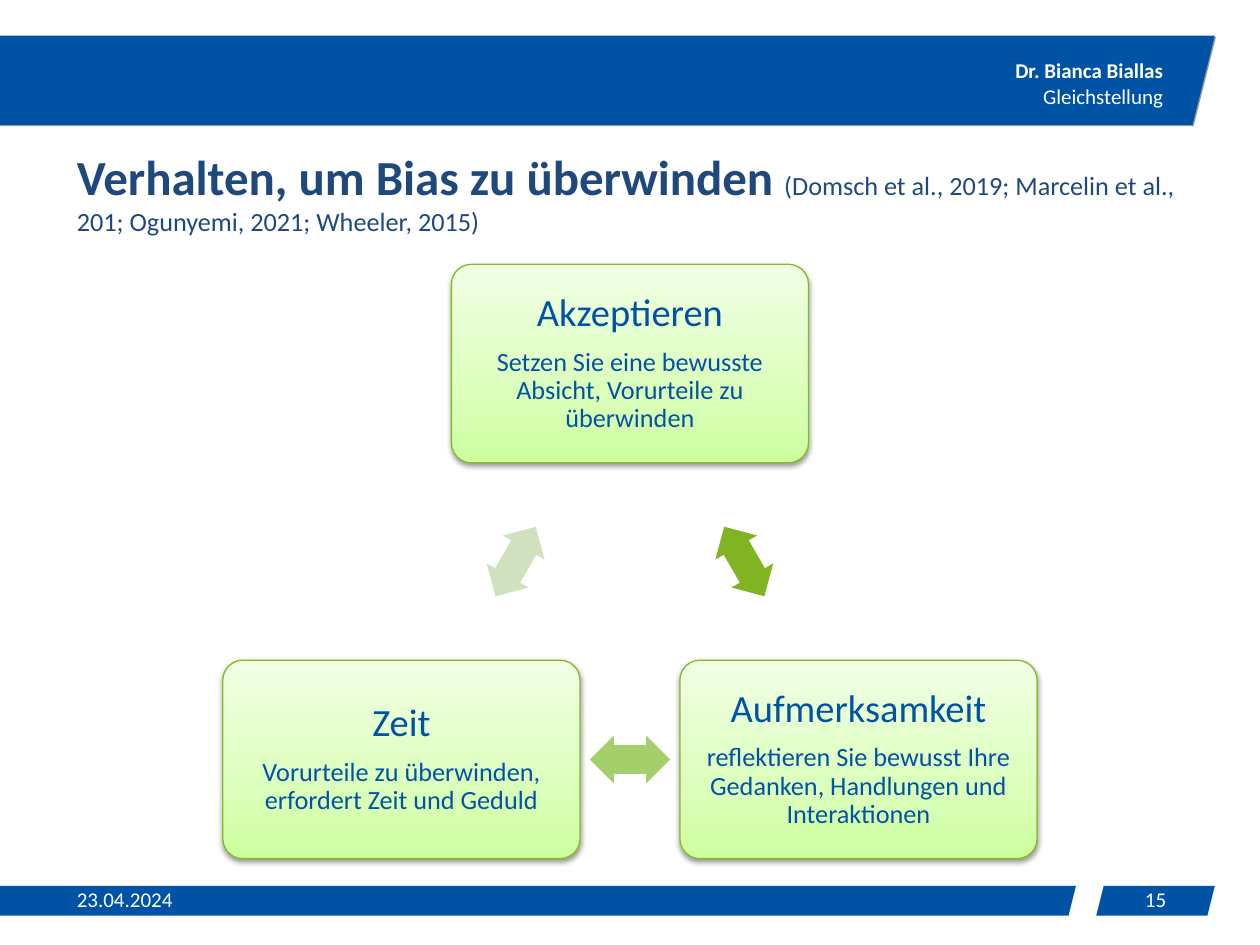
import copy
import math
from dataclasses import dataclass

from lxml import etree
from pptx import Presentation
from pptx import util as u
from pptx.dml.color import RGBColor
from pptx.enum import shapes, text
from pptx.oxml.ns import qn


@dataclass(frozen=True)
class Theme:
    font: str = "Calibri"
    blue: str = "0053A4"
    title: str = "1F497D"
    white: str = "FFFFFF"
    card_line: str = "84BC20"
    card_fill: tuple = ((0, "CDFF9F"), (0.35, "DBFFBB"), (1, "F1FFE5"))
    title_size: float = 28
    heading_size: float = 22
    body_size: float = 15
    small_size: float = 12


THEME = Theme()

HEADER = ("Dr. Bianca Biallas", "Gleichstellung")
TITLE = "Verhalten, um Bias zu überwinden "
SOURCES = "(Domsch et al., 2019; Marcelin et al., 201; Ogunyemi, 2021; Wheeler, 2015)"
DATE, PAGE = "23.04.2024", "15"

# Clockwise from the top: heading, body, colour of the arrow to the next card
CARDS = [
    ("Akzeptieren", "Setzen Sie eine bewusste Absicht, Vorurteile zu überwinden", "80B423"),
    ("Aufmerksamkeit", "reflektieren Sie bewusst Ihre Gedanken, Handlungen und Interaktionen", "A4D06B"),
    ("Zeit", "Vorurteile zu überwinden, erfordert Zeit und Geduld", "CFE1BE"),
]

# Left, top, width, height in cm
HEADER_BAR = (-0.51, 0.72, 25, 1.8)
FOOTER_BARS = [(-0.51, 17.86, 22.2, 0.6), (22.1, 17.86, 2.39, 0.6)]
CYCLE_CENTER = (12.7, 12.65)
CYCLE_RADIUS = 5.32
CARD_SIZE = (7.2, 4)
ARROW_SIZE = (1.62, 0.97)


def rgb(color):
    return RGBColor.from_string(color)


def add_shape(slide, kind, box, color=None):
    shape = slide.shapes.add_shape(kind, *map(u.Cm, box))
    shape.shadow.inherit = False
    shape.line.fill.background()
    if color:
        shape.fill.solid()
        shape.fill.fore_color.rgb = rgb(color)
    return shape


def add_shadow(shape, opacity, blur, distance, angle):
    """Give an outer shadow; opacity in percent, lengths in points."""
    effects = shape._element.spPr.find(qn("a:effectLst"))
    shadow = etree.SubElement(
        effects, qn("a:outerShdw"), blurRad=str(u.Pt(blur)),
        dist=str(u.Pt(distance)), dir=str(angle * 60000), rotWithShape="0")
    color = etree.SubElement(shadow, qn("a:srgbClr"), val="000000")
    etree.SubElement(color, qn("a:alpha"), val=str(opacity * 1000))


def fill_gradient(shape, stops):
    """Run the colour stops from the bottom of the shape to its top."""
    shape.fill.gradient()
    shape.fill.gradient_angle = 90
    stop_list = shape._element.spPr.find(qn("a:gradFill")).find(qn("a:gsLst"))
    stop_list.insert(1, copy.deepcopy(stop_list[0]))
    for stop, (position, color) in zip(shape.fill.gradient_stops, stops):
        stop.position = position
        stop.color.rgb = rgb(color)


def add_run(paragraph, content, size=THEME.small_size, color=THEME.white, bold=False):
    run = paragraph.add_run()
    run.text = content
    run.font.name = THEME.font
    run.font.size = u.Pt(size)
    run.font.bold = bold
    run.font.color.rgb = rgb(color)


def add_text_box(slide, box, paragraphs, align=text.PP_ALIGN.LEFT,
                 anchor=text.MSO_ANCHOR.MIDDLE, wrap=True):
    """Each paragraph is a list of (text, format) runs."""
    frame = slide.shapes.add_textbox(*map(u.Cm, box)).text_frame
    frame.word_wrap = wrap
    frame.vertical_anchor = anchor
    for index, runs in enumerate(paragraphs):
        paragraph = frame.add_paragraph() if index else frame.paragraphs[0]
        paragraph.alignment = align
        for content, style in runs:
            add_run(paragraph, content, **style)


def add_card(slide, center, heading, body):
    width, height = CARD_SIZE
    box = (center[0] - width / 2, center[1] - height / 2, width, height)
    card = add_shape(slide, shapes.MSO_SHAPE.ROUNDED_RECTANGLE, box)
    card.adjustments[0] = 0.1
    fill_gradient(card, THEME.card_fill)
    card.line.color.rgb = rgb(THEME.card_line)
    card.line.width = u.Pt(0.75)
    add_shadow(card, 38, 3.1, 1.6, 90)

    frame = card.text_frame
    frame.word_wrap = True
    frame.vertical_anchor = text.MSO_ANCHOR.MIDDLE
    frame.margin_left = frame.margin_right = u.Cm(0.35)
    frame.margin_top = frame.margin_bottom = u.Cm(0.35)
    lines = [(heading, THEME.heading_size), (body, THEME.body_size)]
    for index, (content, size) in enumerate(lines):
        paragraph = frame.add_paragraph() if index else frame.paragraphs[0]
        paragraph.alignment = text.PP_ALIGN.CENTER
        paragraph.line_spacing = 0.9
        if index:
            paragraph.space_before = u.Pt(7.5)
        add_run(paragraph, content, size=size, color=THEME.blue)


def add_arrow(slide, start, end, color):
    """Put a double arrow halfway between two card centres."""
    width, height = ARROW_SIZE
    x, y = ((a + b) / 2 for a, b in zip(start, end))
    box = (x - width / 2, y - height / 2, width, height)
    arrow = add_shape(slide, shapes.MSO_SHAPE.LEFT_RIGHT_ARROW, box, color)
    arrow.adjustments[0] = 0.6
    arrow.adjustments[1] = 0.5
    arrow.rotation = round(math.degrees(math.atan2(end[1] - start[1], end[0] - start[0]))) % 360


def add_cycle(slide):
    centers = []
    for index in range(len(CARDS)):
        angle = math.tau * index / len(CARDS)
        centers.append((CYCLE_CENTER[0] + CYCLE_RADIUS * math.sin(angle),
                        CYCLE_CENTER[1] - CYCLE_RADIUS * math.cos(angle)))
    for index, (heading, body, color) in enumerate(CARDS):
        add_card(slide, centers[index], heading, body)
        add_arrow(slide, centers[index], centers[(index + 1) % len(CARDS)], color)


def main():
    presentation = Presentation()
    presentation.slide_width = u.Cm(25.4)
    presentation.slide_height = u.Cm(19.05)
    slide = presentation.slides.add_slide(presentation.slide_layouts[6])

    for bar in FOOTER_BARS:
        add_shape(slide, shapes.MSO_SHAPE.PARALLELOGRAM, bar, THEME.blue)
    header = add_shape(slide, shapes.MSO_SHAPE.PARALLELOGRAM, HEADER_BAR, THEME.blue)
    add_shadow(header, 40, 0, 1, 45)

    name, department = HEADER
    add_text_box(slide, (20.17, 1.04, 3.53, 1.27),
                 [[(name, {"bold": True})], [(department, {})]],
                 align=text.PP_ALIGN.RIGHT, wrap=False)
    add_text_box(slide, (1.3, 2.82, 22.8, 2.1), [[
        (TITLE, {"size": THEME.title_size, "color": THEME.title, "bold": True}),
        (SOURCES, {"size": THEME.body_size, "color": THEME.title}),
    ]], anchor=text.MSO_ANCHOR.TOP)
    add_cycle(slide)
    add_text_box(slide, (1.3, 17.73, 2.8, 0.8), [[(DATE, {})]])
    add_text_box(slide, (22.1, 17.73, 2.39, 0.8), [[(PAGE, {})]],
                 align=text.PP_ALIGN.CENTER)

    presentation.save("out.pptx")


if __name__ == "__main__":
    main()
